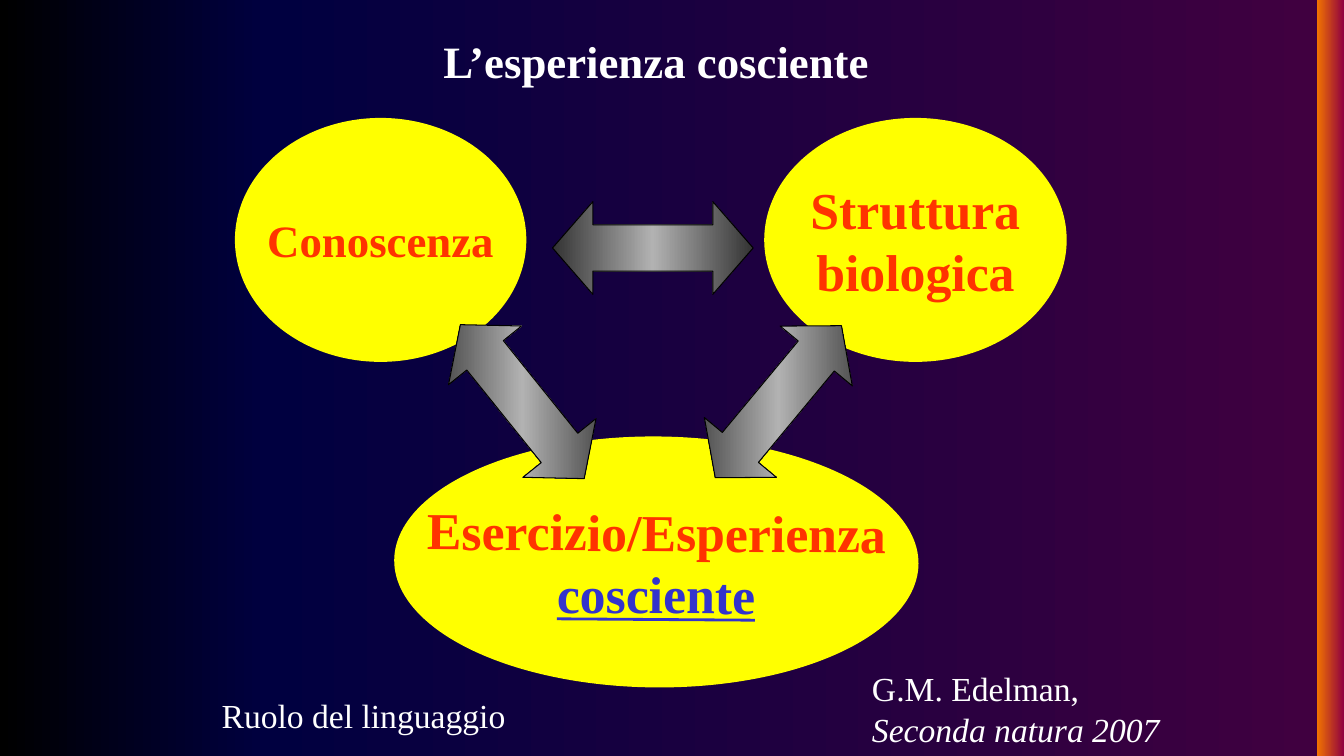
import lxml.etree
import pptx
import pptx.dml.color
import pptx.enum.shapes
import pptx.enum.text
import pptx.oxml.ns
import pptx.util

Inches = pptx.util.Inches
RGBColor = pptx.dml.color.RGBColor
SHAPE = pptx.enum.shapes.MSO_SHAPE
ALIGN = pptx.enum.text.PP_ALIGN
ANCHOR = pptx.enum.text.MSO_ANCHOR
AUTO_SIZE = pptx.enum.text.MSO_AUTO_SIZE
qn = pptx.oxml.ns.qn

BLACK = RGBColor(0x00, 0x00, 0x00)
WHITE = RGBColor(0xFF, 0xFF, 0xFF)
YELLOW = RGBColor(0xFF, 0xFF, 0x00)
RED = RGBColor(0xFF, 0x33, 0x00)
BLUE = RGBColor(0x33, 0x33, 0xCC)
DARK_GREY = RGBColor(0x33, 0x33, 0x33)
LIGHT_GREY = RGBColor(0xB2, 0xB2, 0xB2)
NAVY = RGBColor(0x00, 0x00, 0x40)
PLUM = RGBColor(0x40, 0x00, 0x40)
ORANGE = RGBColor(0xF2, 0x73, 0x00)
CRIMSON = RGBColor(0x8F, 0x00, 0x40)
AMBER = RGBColor(0xFF, 0xBF, 0x00)

FONT = "Times New Roman"
NIGHT_STOPS = [(0, BLACK), (20, NAVY), (98, PLUM),
               (98, ORANGE), (100, CRIMSON), (100, AMBER)]
STEEL_STOPS = [(0, DARK_GREY), (50, LIGHT_GREY), (100, DARK_GREY)]


def set_gradient(fill, owner, stops):
    fill.gradient()
    fill.gradient_angle = 0
    grad = next(owner.iter(qn("a:gradFill")))
    grad.set("rotWithShape", "0")
    gs_list = grad.find(qn("a:gsLst"))
    for gs in list(gs_list):
        gs_list.remove(gs)
    for percent, color in stops:
        gs = lxml.etree.SubElement(gs_list, qn("a:gs"), pos=str(percent * 1000))
        lxml.etree.SubElement(gs, qn("a:srgbClr"), val=str(color))


def add_text(p, text, size=24, color=WHITE, bold=False, italic=False,
             underline=False, align=ALIGN.LEFT):
    p.alignment = align
    r = p.add_run()
    r.text = text
    r.font.name = FONT
    r.font.size = pptx.util.Pt(size)
    r.font.color.rgb = color
    r.font.bold = bold
    r.font.italic = italic
    r.font.underline = underline


def fill_frame(tf, lines, **common):
    tf.word_wrap = False
    for i, (text, extra) in enumerate(lines):
        p = tf.add_paragraph() if i else tf.paragraphs[0]
        add_text(p, text, **{**common, **extra})


def add_oval(s, box, lines, size, rotation=0):
    sp = s.shapes.add_shape(SHAPE.OVAL, *map(Inches, box))
    sp.shadow.inherit = False
    sp.rotation = rotation
    sp.fill.solid()
    sp.fill.fore_color.rgb = YELLOW
    sp.line.fill.background()
    tf = sp.text_frame
    tf.vertical_anchor = ANCHOR.MIDDLE
    tf.margin_left = tf.margin_right = Inches(0.3)
    tf.margin_top = tf.margin_bottom = Inches(0.15)
    fill_frame(tf, lines, size=size, color=RED, bold=True, align=ALIGN.CENTER)


def add_double_arrow(s, box, head, rotation=0):
    sp = s.shapes.add_shape(SHAPE.LEFT_RIGHT_ARROW, *map(Inches, box))
    sp.shadow.inherit = False
    sp.rotation = rotation
    sp.adjustments[0] = 0.5
    sp.adjustments[1] = head
    set_gradient(sp.fill, sp.element, STEEL_STOPS)
    sp.line.color.rgb = BLACK
    sp.line.width = pptx.util.Pt(0.75)


def add_label(s, box, lines, **common):
    sp = s.shapes.add_textbox(*map(Inches, box))
    sp.text_frame.auto_size = AUTO_SIZE.SHAPE_TO_FIT_TEXT
    fill_frame(sp.text_frame, lines, **common)


def main():
    prs = pptx.Presentation()
    prs.slide_width = Inches(13.33)
    prs.slide_height = Inches(7.5)
    s = prs.slides.add_slide(prs.slide_layouts[6])
    set_gradient(s.background.fill, s.element, NIGHT_STOPS)

    add_double_arrow(s, (5.48, 2, 1.99, 0.92), 0.435)
    add_oval(s, (2.33, 1.17, 2.89, 2.42), [("Conoscenza", {})], 32)
    add_oval(s, (3.91, 4.33, 5.2, 2.49),
             [("Esercizio/Esperienza", {}),
              ("cosciente", {"color": BLUE, "underline": True})], 37, 0.4)
    add_oval(s, (7.58, 1.17, 3, 2.42),
             [("Struttura", {}), ("biologica", {})], 37)
    for left, rotation in ((4.2, 51.2), (6.74, 309.7)):
        add_double_arrow(s, (left, 3.52, 1.96, 0.93), 0.42, rotation)

    add_label(s, (8.55, 6.58, 3.08, 0.91),
              [("G.M. Edelman,", {}), ("Seconda natura 2007", {"italic": True})])
    add_label(s, (2.1, 6.84, 3.04, 0.5), [("Ruolo del linguaggio", {})])
    add_label(s, (4.3, 0.29, 4.46, 0.64), [("L’esperienza cosciente", {})],
              size=32, bold=True)
    prs.save("out.pptx")


if __name__ == "__main__":
    main()
